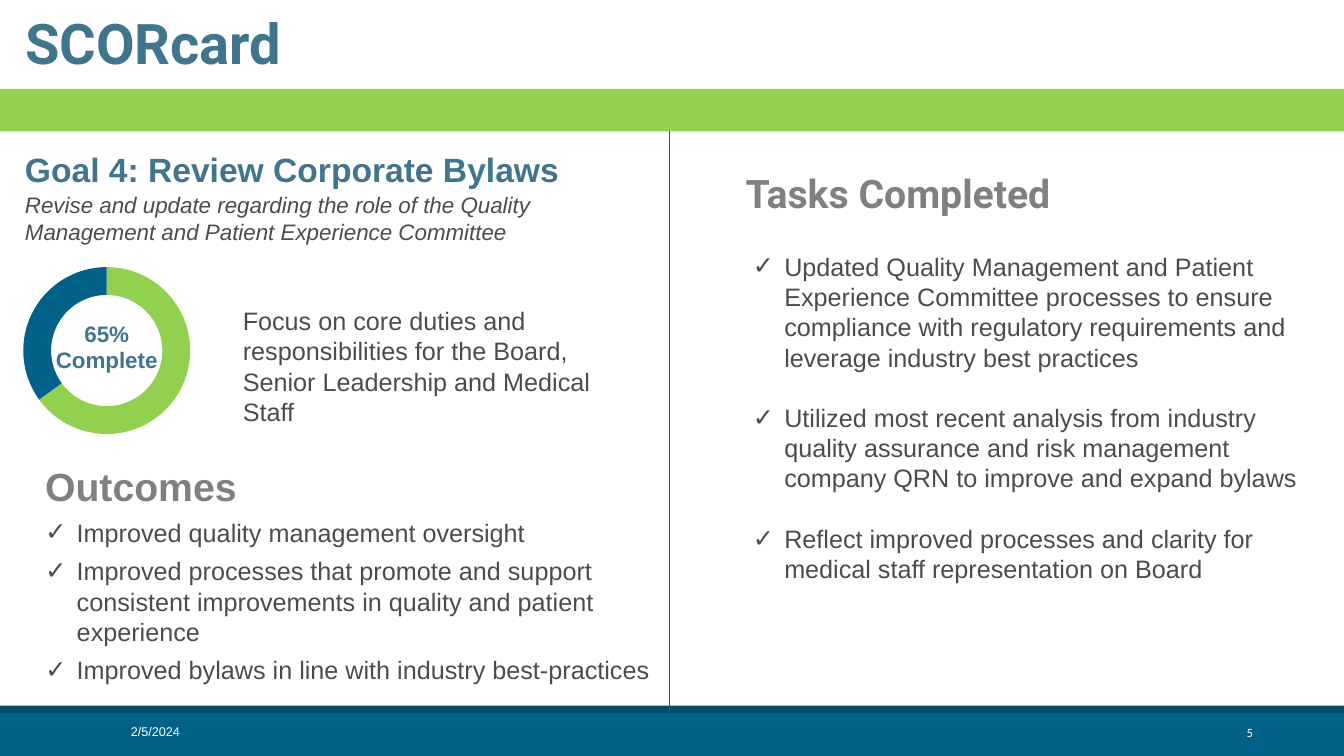
from lxml import etree
from pptx import Presentation
from pptx.chart.data import CategoryChartData
from pptx.dml.color import RGBColor
from pptx.enum.chart import XL_CHART_TYPE as Chart
from pptx.enum.shapes import MSO_CONNECTOR, MSO_SHAPE
from pptx.enum.text import MSO_ANCHOR as Anchor, MSO_AUTO_SIZE as AutoSize, PP_ALIGN as Align
from pptx.oxml import parse_xml
from pptx.oxml.ns import nsdecls, qn
from pptx.util import Cm, Pt

COLORS = {
    "blue": "016188", "navy": "014A67", "green": "92D050", "steel": "41748D",
    "text": "4C4C4C", "grey": "808080", "white": "FFFFFF",
}
WIDTH, HEIGHT = 33.87, 19.05
INDENT = 0.79


def rgb(name):
    return RGBColor.from_string(COLORS[name])


class Board:
    """Holds the current slide and draws styled elements; lengths are in cm."""

    def __init__(self, slide, font="Arial"):
        self.slide = slide
        self.shapes = slide.shapes
        self.font = font

    def bar(self, top, height, color):
        s = self.shapes.add_shape(MSO_SHAPE.RECTANGLE, Cm(0), Cm(top), Cm(WIDTH), Cm(height))
        s.shadow.inherit = False
        s.fill.solid()
        s.fill.fore_color.rgb = rgb(color)
        s.line.fill.background()

    def divider(self, x, top, bottom):
        line = self.shapes.add_connector(MSO_CONNECTOR.STRAIGHT, Cm(x), Cm(bottom), Cm(x), Cm(top))
        line.line.color.rgb = rgb("blue")
        line.line.width = Pt(1)
        etree.SubElement(line._element.spPr, qn("a:effectLst"))

    def fill_text(self, s, box, paragraphs, size, color="text", font=None, bold=False,
                  italic=False, align=Align.LEFT, anchor=Anchor.TOP, wrap=True,
                  check=False, gap=0):
        """Place shape s at box and fill it; gap is the space between paragraphs in points."""
        s.left, s.top, s.width, s.height = map(Cm, box)
        tf = s.text_frame
        tf.word_wrap = wrap
        tf.auto_size = AutoSize.NONE
        tf.vertical_anchor = anchor
        for i, text in enumerate(paragraphs):
            p = tf.add_paragraph() if i else tf.paragraphs[0]
            p.alignment = align
            p.space_before = Pt(gap if i else 0)
            if check:
                self.check_bullet(p)
            for j, line in enumerate(text.split("\n")):
                if j:
                    p.add_line_break()
                r = p.add_run()
                r.text = line
                r.font.name = font or self.font
                r.font.size = Pt(size)
                r.font.bold, r.font.italic = bold, italic
                r.font.color.rgb = rgb(color)

    def text(self, box, paragraphs, size, **style):
        self.fill_text(self.shapes.add_textbox(*map(Cm, box)), box, paragraphs, size, **style)

    def check_bullet(self, p):
        pPr = p._p.get_or_add_pPr()
        pPr.set("marL", str(Cm(INDENT)))
        pPr.set("indent", str(-Cm(INDENT)))
        etree.SubElement(pPr, qn("a:buFont")).set("typeface", self.font)
        etree.SubElement(pPr, qn("a:buChar")).set("char", "✓")

    def progress_ring(self, box, percent):
        """Doughnut whose empty inner series keeps the ring narrow."""
        data = CategoryChartData()
        data.categories = ["1", "2", "3", "4"]
        data.add_series("Series 1", (0, 0, None, None))
        data.add_series("Series 2", (percent, 100 - percent, None, None))
        chart = self.shapes.add_chart(Chart.DOUGHNUT, *map(Cm, box), data).chart
        chart.has_legend = chart.has_title = False
        chart.font.name, chart.font.size = "Calibri", Pt(10)
        chart.font.color.rgb = rgb("text")
        plot = chart.plots[0]
        plot.vary_by_categories = True
        for series in plot.series:
            for i, color in enumerate(("green", "blue")):
                fmt = series.points[i].format
                fmt.fill.solid()
                fmt.fill.fore_color.rgb = rgb(color)
                fmt.line.fill.background()
        area = chart._chartSpace.chart.plotArea
        for old in area.findall(qn("c:layout")):
            area.remove(old)
        sizes = "".join(f'<c:{k} val="{v}"/>' for k, v in
                        (("x", 0.06), ("y", 0.1), ("w", 0.88), ("h", 0.92)))
        area.insert(0, parse_xml(
            f'<c:layout {nsdecls("c")}><c:manualLayout><c:layoutTarget val="inner"/>'
            f'<c:xMode val="edge"/><c:yMode val="edge"/>{sizes}</c:manualLayout></c:layout>'))


def main():
    prs = Presentation()
    prs.slide_width, prs.slide_height = Cm(WIDTH), Cm(HEIGHT)
    slide = prs.slides.add_slide(prs.slide_layouts[3])
    title, outcomes, tasks = slide.placeholders
    board = Board(slide)

    board.bar(17.93, 1.12, "blue")
    board.bar(17.78, 0.18, "navy")
    board.bar(2.24, 1.07, "green")
    board.divider(16.87, 3.3, 17.93)
    board.text((26.72, 18.14, 5.11, 0.64), ["5"], 9, color="white", font="Calibri",
               align=Align.RIGHT, anchor=Anchor.MIDDLE)
    board.text((3.05, 17.93, 6.86, 1.02), ["2/5/2024"], 9, color="white", anchor=Anchor.MIDDLE)

    board.fill_text(title, (0.38, 0.08, 7.06, 1.96), ["SCORcard"], 40, color="steel",
                    font="Roboto", bold=True, wrap=False)
    board.text((0.38, 3.63, 14.33, 1.27), ["Goal 4: Review Corporate Bylaws"], 24,
               color="steel", bold=True)
    board.text((0.38, 4.7, 15.27, 1.63),
               ["Revise and update regarding the role of the Quality Management and "
                "Patient Experience Committee"], 16, italic=True)
    board.progress_ring((0.3, 6.2, 4.78, 4.88), 65)
    board.text((0.91, 7.92, 3.56, 1.63), ["65%", "Complete"], 16, color="steel", bold=True,
               align=Align.CENTER, anchor=Anchor.MIDDLE)
    board.text((5.87, 7.57, 10.41, 3.33),
               ["Focus on core duties and responsibilities for the Board, "
                "Senior Leadership and Medical Staff"], 18)

    board.text((0.89, 11.53, 13.16, 1.45), ["Outcomes"], 28, color="grey", bold=True)
    board.fill_text(outcomes, (0.89, 12.9, 15.82, 4.52), [
        "Improved quality management oversight",
        "Improved processes that promote and support consistent improvements in quality "
        "and patient experience",
        "Improved bylaws in line with industry best-practices",
    ], 18, check=True, gap=6)

    board.text((18.54, 4.14, 10.59, 1.45), ["Tasks Completed"], 28, color="grey",
               font="Roboto", bold=True)
    board.fill_text(tasks, (18.72, 6.2, 14.25, 9.5), [
        "Updated Quality Management and Patient\nExperience Committee processes to ensure\n"
        "compliance with regulatory requirements and leverage industry best practices",
        "Utilized most recent analysis from industry\nquality assurance and risk management\n"
        "company QRN to improve and expand bylaws",
        "Reflect improved processes and clarity for medical staff representation on Board",
    ], 18, check=True, gap=21.6)

    prs.save("out.pptx")


if __name__ == "__main__":
    main()
